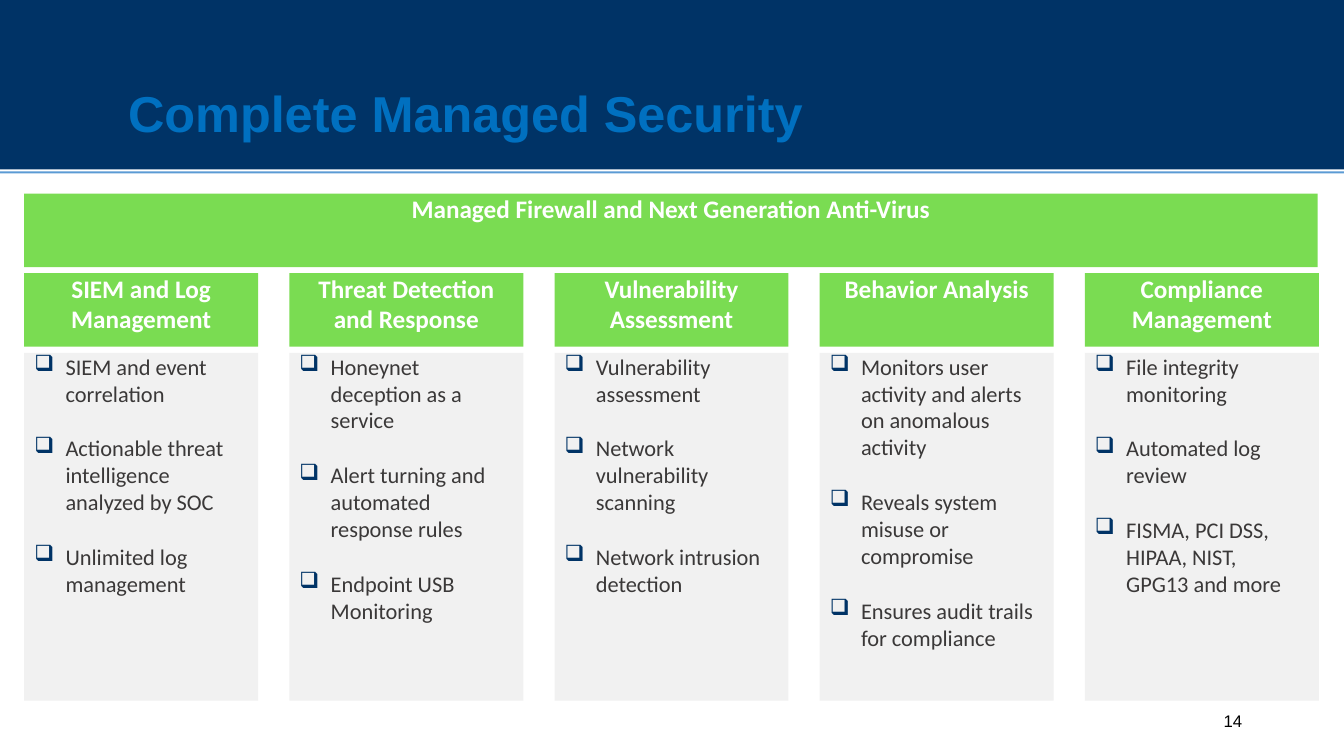
"""Build the managed security services slide."""
from dataclasses import dataclass

from lxml.etree import SubElement
from pptx import Presentation
from pptx.dml.color import RGBColor
from pptx.enum.shapes import MSO_SHAPE as Preset
from pptx.enum.text import MSO_ANCHOR as Anchor, PP_ALIGN as Align
from pptx.oxml.ns import qn
from pptx.util import Inches, Pt

NAVY = "003366"
BLUE = "0070C0"
RULE_BLUE = "5B9BD4"
GREEN = "7ADC52"
GREY = "F1F1F1"
DARK = "3A3838"
WHITE = "FFFFFF"
BLACK = "000000"

LEFT, PITCH, CARD_WIDTH = 0.24, 2.63, 2.32
HEADING_HEIGHT = 0.73
BANNER_TOP, HEADING_TOP, LIST_TOP = 1.92, 2.71, 3.5


@dataclass
class Service:
    heading: str
    points: list[str]


SERVICES = [
    Service("SIEM and Log Management", [
        "SIEM and event correlation",
        "Actionable threat intelligence analyzed by SOC",
        "Unlimited log management"]),
    Service("Threat Detection and Response", [
        "Honeynet deception as a service",
        "Alert turning and automated response rules",
        "Endpoint USB Monitoring"]),
    Service("Vulnerability Assessment", [
        "Vulnerability assessment",
        "Network vulnerability scanning",
        "Network intrusion detection"]),
    Service("Behavior Analysis", [
        "Monitors user activity and alerts on anomalous activity",
        "Reveals system misuse or compromise",
        "Ensures audit trails for compliance"]),
    Service("Compliance Management", [
        "File integrity monitoring",
        "Automated log review",
        "FISMA, PCI DSS, HIPAA, NIST, GPG13 and more"]),
]


def colour(value: str) -> RGBColor:
    return RGBColor.from_string(value)


def add_bullet(para) -> None:
    properties = para._p.get_or_add_pPr()
    properties.set("marL", str(Inches(0.41)))
    properties.set("indent", str(Inches(-0.31)))
    tint = SubElement(properties, qn("a:buClr"))
    SubElement(tint, qn("a:srgbClr"), val=NAVY)
    SubElement(properties, qn("a:buChar"), char="❑")


def write(shape, lines: list[str], *, size: float, fill: str, font: str = "Calibri",
          bold: bool = False, align=Align.LEFT, anchor=Anchor.TOP,
          insets: tuple = (0, 0, 0, 0), bullets: bool = False, gap: float = 0) -> None:
    frame = shape.text_frame
    frame.word_wrap = True
    frame.vertical_anchor = anchor
    (frame.margin_left, frame.margin_top,
     frame.margin_right, frame.margin_bottom) = map(Inches, insets)
    for index, line in enumerate(lines):
        para = frame.add_paragraph() if index else frame.paragraphs[0]
        if bullets:
            add_bullet(para)
        para.alignment = align
        para.space_before = Pt(gap if index else 0)
        span = para.add_run()
        span.text = line
        span.font.name = font
        span.font.size = Pt(size)
        span.font.bold = bold
        span.font.color.rgb = colour(fill)


def add_panel(page, left: float, top: float, width: float, height: float, fill: str):
    panel = page.shapes.add_shape(
        Preset.RECTANGLE, Inches(left), Inches(top), Inches(width), Inches(height))
    panel.shadow.inherit = False
    panel.fill.solid()
    panel.fill.fore_color.rgb = colour(fill)
    panel.line.fill.background()
    return panel


def add_heading(page, left: float, top: float, width: float, text: str) -> None:
    panel = add_panel(page, left, top, width, HEADING_HEIGHT, GREEN)
    write(panel, [text], size=18, fill=WHITE, bold=True, align=Align.CENTER,
          insets=(0.2, 0, 0.2, 0))


def add_service(page, left: float, service: Service) -> None:
    panel = add_panel(page, left, LIST_TOP, CARD_WIDTH, 3.45, GREY)
    write(panel, service.points, size=16, fill=DARK, bullets=True, gap=20,
          insets=(0, 0, 0.17, 0))
    add_heading(page, left, HEADING_TOP, CARD_WIDTH, service.heading)


def add_title(page, text: str) -> None:
    title = page.shapes.title
    title.left, title.top = Inches(1.05), Inches(0.39)
    title.width, title.height = Inches(11.72), Inches(1.02)
    write(title, [text], size=36, fill=BLUE, font="Arial", bold=True,
          anchor=Anchor.MIDDLE, insets=(0.22, 0.42, 0, 0))
    page.shapes.element.append(title.element)


def main() -> None:
    deck = Presentation()
    deck.slide_width, deck.slide_height = Inches(13.33), Inches(7.5)
    page = deck.slides.add_slide(deck.slide_layouts[5])

    for index, service in enumerate(SERVICES):
        add_service(page, LEFT + index * PITCH, service)
    add_panel(page, 0, 1.7, 13.33, 0.02, RULE_BLUE)
    add_panel(page, 0, 0, 13.33, 1.68, NAVY)
    add_title(page, "Complete Managed Security")
    add_heading(page, LEFT, BANNER_TOP, 12.83,
                "Managed Firewall and Next Generation Anti-Virus")

    number = page.shapes.add_textbox(Inches(9.42), Inches(6.95), Inches(3), Inches(0.4))
    write(number, ["14"], size=12, fill=BLACK, font="Arial", align=Align.RIGHT,
          anchor=Anchor.MIDDLE, insets=(0.1, 0.05, 0.1, 0.05))
    deck.save("out.pptx")


if __name__ == "__main__":
    main()
